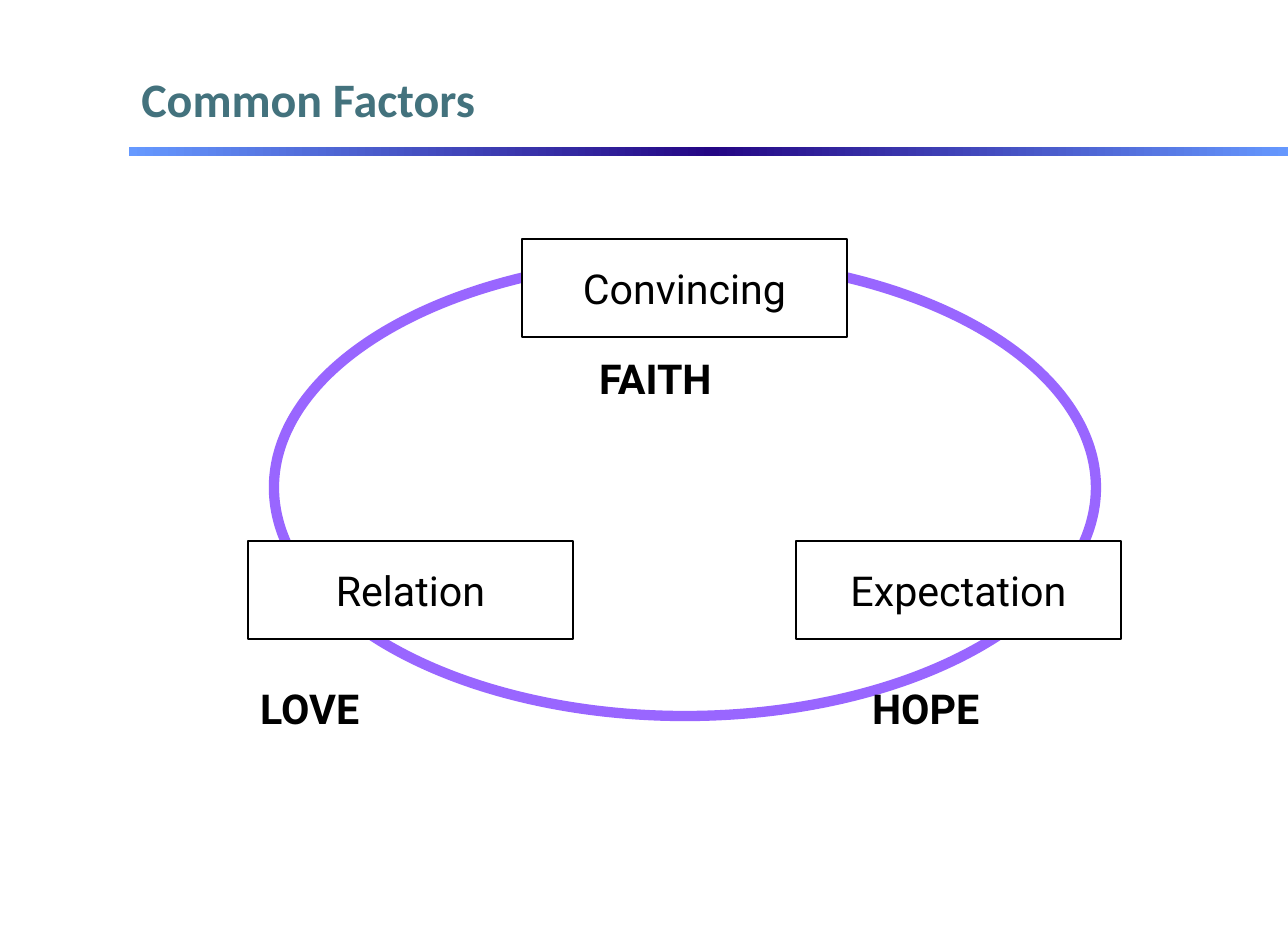
from copy import deepcopy

from pptx import Presentation
from pptx.dml.color import RGBColor
from pptx.enum.shapes import MSO_SHAPE
from pptx.enum.text import MSO_ANCHOR, PP_ALIGN
from pptx.oxml.ns import qn
from pptx.util import Pt

EMU_PER_PX = 7404
BOX_WIDTH, BOX_HEIGHT = 325, 98
BLACK, WHITE, PURPLE, TEAL = "000000", "FFFFFF", "9966FF", "43727D"
GRADIENT = [(0, "6699FF"), (0.5, "240684"), (1, "6699FF")]
BODY_FONT = {"name": "Roboto", "size": Pt(24), "bold": False}
LABEL_FONT = {**BODY_FONT, "bold": True}
TITLE_FONT = {"name": "Calibri", "size": Pt(28), "bold": True}

FACTORS = [("Convincing", 522, 239), ("Expectation", 796, 541), ("Relation", 248, 541)]
VIRTUES = [("FAITH", 587, 347, 156), ("LOVE", 248, 677, 135), ("HOPE", 860, 677, 142)]


def px(*lengths):
    """Turn pixel lengths into EMU."""
    return [length * EMU_PER_PX for length in lengths]


def color(hex_string):
    return RGBColor.from_string(hex_string)


def write_text(shape, text, font_format, font_color, alignment, anchor, wrap=False):
    frame = shape.text_frame
    frame.text = text
    frame.word_wrap = wrap
    frame.vertical_anchor = anchor
    paragraph = frame.paragraphs[0]
    paragraph.alignment = alignment
    for name, value in font_format.items():
        setattr(paragraph.font, name, value)
    paragraph.font.color.rgb = color(font_color)


def add_outlined(slide, preset, bounds, line_color, line_width, fill_color=None):
    shape = slide.shapes.add_shape(preset, *px(*bounds))
    shape.shadow.inherit = False
    if fill_color:
        shape.fill.solid()
        shape.fill.fore_color.rgb = color(fill_color)
    else:
        shape.fill.background()
    shape.line.color.rgb = color(line_color)
    shape.line.width = Pt(line_width)
    return shape


def add_title(slide, text):
    title = slide.shapes.title
    title.left, title.top, title.width, title.height = px(129, 54, 1114, 89)
    write_text(title, text, TITLE_FONT, TEAL, PP_ALIGN.LEFT, MSO_ANCHOR.MIDDLE, wrap=True)


def add_gradient_bar(slide):
    bar = slide.shapes.add_shape(MSO_SHAPE.RECTANGLE, *px(129, 147, 1165, 9))
    bar.shadow.inherit = False
    bar.line.fill.background()
    bar.fill.gradient()
    bar.fill.gradient_angle = 0
    first_stop = next(bar.element.iter(qn("a:gs")))
    first_stop.addnext(deepcopy(first_stop))
    for stop, (position, stop_color) in zip(bar.fill.gradient_stops, GRADIENT):
        stop.position = position
        stop.color.rgb = color(stop_color)


def add_factor_box(slide, text, left, top):
    bounds = (left, top, BOX_WIDTH, BOX_HEIGHT)
    box = add_outlined(slide, MSO_SHAPE.RECTANGLE, bounds, BLACK, 1, WHITE)
    write_text(box, text, BODY_FONT, BLACK, PP_ALIGN.CENTER, MSO_ANCHOR.MIDDLE)


def add_virtue_label(slide, text, left, top, width):
    label = slide.shapes.add_textbox(*px(left, top, width, 62))
    write_text(label, text, LABEL_FONT, BLACK, PP_ALIGN.LEFT, MSO_ANCHOR.TOP)


def main():
    presentation = Presentation()
    presentation.slide_width, presentation.slide_height = px(1288, 926)
    slide = presentation.slides.add_slide(presentation.slide_layouts[5])
    add_title(slide, "Common Factors")
    add_gradient_bar(slide)
    add_outlined(slide, MSO_SHAPE.OVAL, (274, 259, 822, 457), PURPLE, 6)
    for factor in FACTORS:
        add_factor_box(slide, *factor)
    for virtue in VIRTUES:
        add_virtue_label(slide, *virtue)
    presentation.save("out.pptx")


if __name__ == "__main__":
    main()
